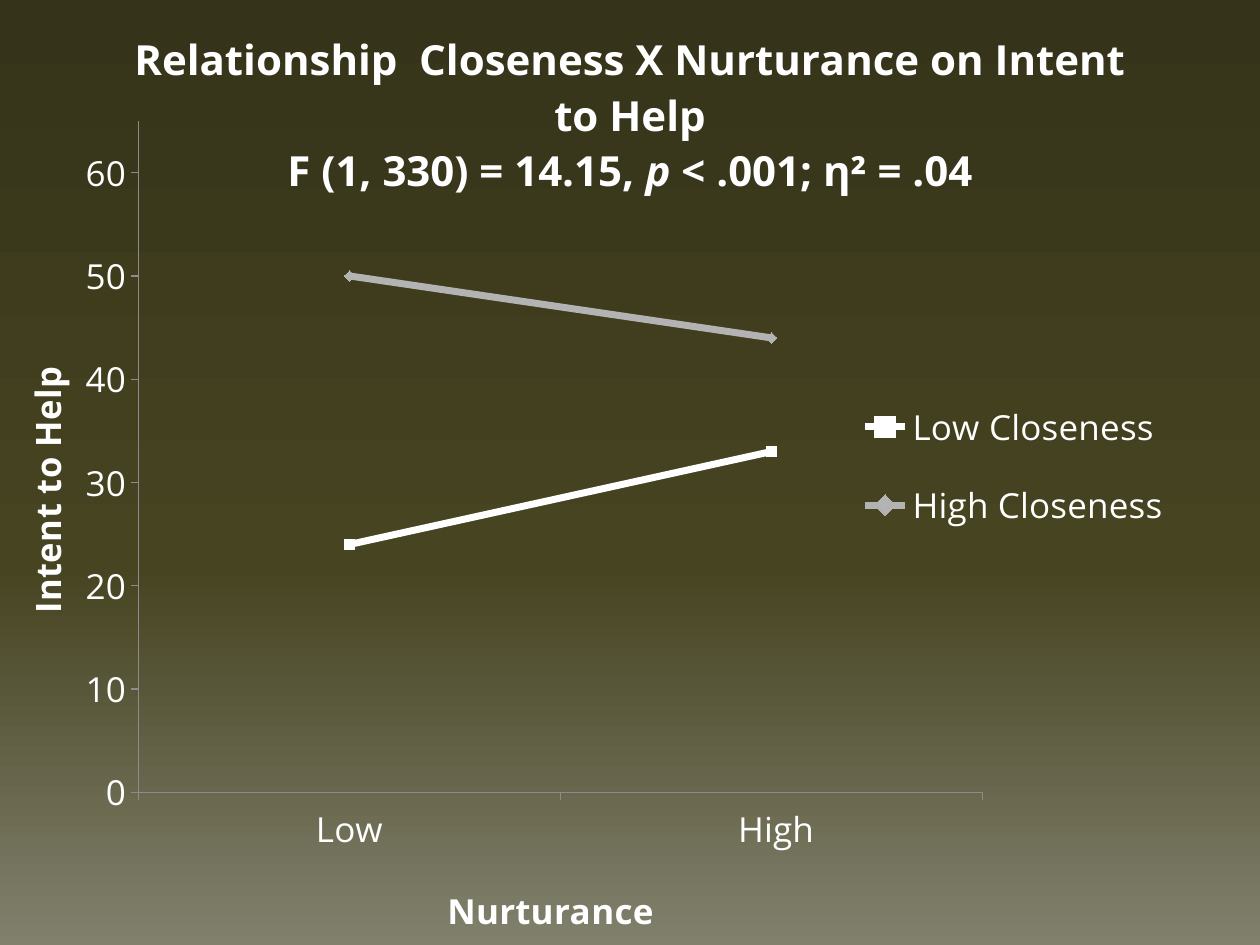
import copy
import pptx
import pptx.chart.data
import pptx.dml.color
import pptx.enum.chart
import pptx.oxml
import pptx.oxml.ns
import pptx.util

Cm = pptx.util.Cm
Pt = pptx.util.Pt
qn = pptx.oxml.ns.qn


def color(hex_string):
    return pptx.dml.color.RGBColor.from_string(hex_string)


def place(element, index, **values):
    for layout in element.findall(qn("c:layout")):
        element.remove(layout)
    settings = "".join(f'<c:{name} val="{value}"/>' for name, value in values.items())
    element.insert(index, pptx.oxml.parse_xml(
        f'<c:layout {pptx.oxml.ns.nsdecls("c")}>'
        f"<c:manualLayout>{settings}</c:manualLayout></c:layout>"))


presentation = pptx.Presentation()
presentation.slide_width = Cm(25.4)
presentation.slide_height = Cm(19.05)
slide = presentation.slides.add_slide(presentation.slide_layouts[6])

background = slide.background.fill
background.gradient()
background.gradient_angle = 270
stop_list = slide.element.find(".//" + qn("a:gsLst"))
stop_list.append(copy.deepcopy(stop_list[-1]))
gradient = [(0, "353319"), (0.6, "464421"), (1, "81806D")]
for stop, (position, shade) in zip(background.gradient_stops, gradient):
    stop.position = position
    stop.color.rgb = color(shade)

data = pptx.chart.data.CategoryChartData()
data.categories = ["Low", " High"]
data.add_series("Low Closeness", [24, 33])
data.add_series("High Closeness", [50, 44])
chart = slide.shapes.add_chart(
    pptx.enum.chart.XL_CHART_TYPE.LINE_MARKERS, Cm(0), Cm(0),
    presentation.slide_width, presentation.slide_height, data).chart
chart.font.name = "Open Sans"
chart.font.size = Pt(20)
chart.font.color.rgb = color("FFFFFF")
chart.plots[0].vary_by_categories = False

marker_style = pptx.enum.chart.XL_MARKER_STYLE
styles = [("FFFFFF", marker_style.SQUARE), ("B3B3B3", marker_style.DIAMOND)]
for series, (shade, style) in zip(chart.plots[0].series, styles):
    series.smooth = False
    series.format.line.width = Pt(4)
    series.format.line.color.rgb = color(shade)
    series.marker.style = style
    series.marker.size = 6
    series.marker.format.fill.solid()
    series.marker.format.fill.fore_color.rgb = color(shade)
    series.marker.format.line.color.rgb = color(shade)

chart.value_axis.minimum_scale = 0
chart.value_axis.maximum_scale = 65
chart.value_axis.major_unit = 10
chart.value_axis.has_major_gridlines = False
for axis, title in [(chart.category_axis, "Nurturance"), (chart.value_axis, "Intent to Help")]:
    axis.major_tick_mark = pptx.enum.chart.XL_TICK_MARK.OUTSIDE
    axis.format.line.color.rgb = color("8C8C8C")
    axis.axis_title.text_frame.text = title

title_frame = chart.chart_title.text_frame
title_frame.text = "Relationship  Closeness X Nurturance on Intent to Help"
statistics = title_frame.add_paragraph()
for text, italic in [("F (1, 330) = 14.15, ", False), ("p", True), (" < .001; η² = .04", False)]:
    run = statistics.add_run()
    run.text = text
    run.font.italic = italic

for frame, size in [(title_frame, 24), (chart.category_axis.axis_title.text_frame, 20),
                    (chart.value_axis.axis_title.text_frame, 20)]:
    for paragraph in frame.paragraphs:
        paragraph.font.name = "Open Sans"
        paragraph.font.size = Pt(size)
        paragraph.font.bold = True
        paragraph.font.color.rgb = color("FFFFFF")

chart.has_legend = True
chart.legend.position = pptx.enum.chart.XL_LEGEND_POSITION.RIGHT
chart.legend.include_in_layout = False

plot_area = slide.element.getroottree() and chart.element.find(".//" + qn("c:plotArea"))
place(plot_area, 0, layoutTarget="inner",
      xMode="edge", yMode="edge", x=0.11, y=0.13, w=0.67, h=0.72)
place(chart.element.find(".//" + qn("c:legend")), 1,
      xMode="edge", yMode="edge", x=0.68, y=0.4, w=0.25, h=0.2)
for axis_tag, left, top in [("c:catAx", 0.35, 0.94), ("c:valAx", 0.01, 0.39)]:
    place(plot_area.find(qn(axis_tag)).find(qn("c:title")), 1,
          xMode="edge", yMode="edge", x=left, y=top)

presentation.save("out.pptx")
